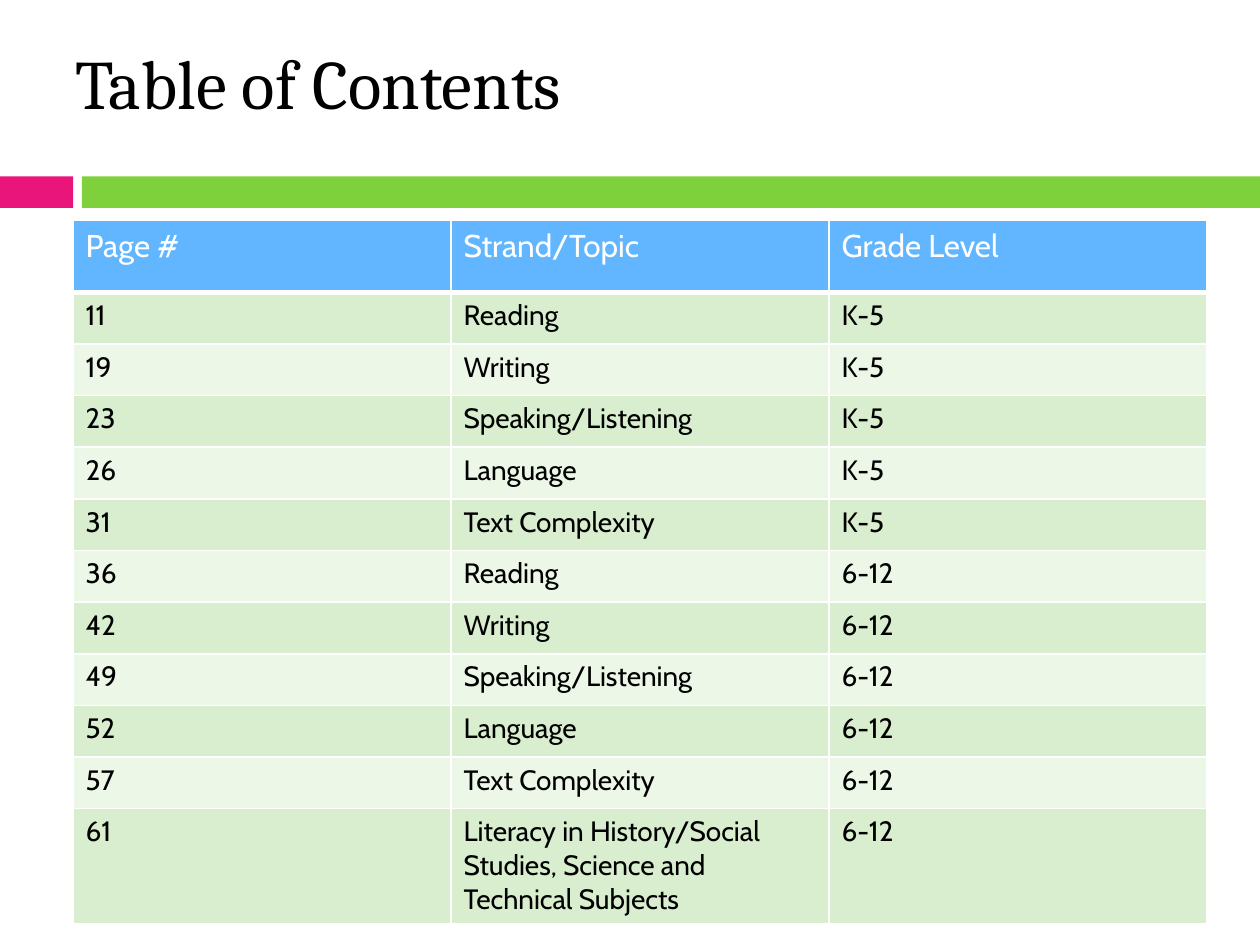
from lxml.etree import SubElement
from pptx import Presentation
from pptx.dml.color import RGBColor
from pptx.enum.shapes import MSO_SHAPE as SHAPE
from pptx.enum.text import MSO_ANCHOR as ANCHOR, PP_ALIGN as ALIGN
from pptx.oxml.ns import qn
from pptx.util import Inches, Pt

WHITE, BLACK = "FFFFFF", "000000"
PINK, GREEN, BLUE = "EA157A", "7FD13B", "61B6FF"
BANDS = ("D8EECE", "ECF7E8")

HEADER = ("Page #", "Strand/Topic", "Grade Level")
STRANDS = ("Reading", "Writing", "Speaking/Listening", "Language", "Text Complexity")
PAGES = {"K-5": (11, 19, 23, 26, 31), "6-12": (36, 42, 49, 52, 57)}
LAST = ("61", "Literacy in History/Social Studies, Science and Technical Subjects", "6-12")


def color(value):
    return RGBColor.from_string(value)


def paint(obj, value):
    obj.fill.solid()
    obj.fill.fore_color.rgb = color(value)


def write(tf, text, size=16, font="Cabin", ink=BLACK):
    p = tf.paragraphs[0]
    p.alignment = ALIGN.LEFT
    r = p.add_run()
    r.text = text
    r.font.size, r.font.name, r.font.bold = Pt(size), font, False
    r.font.color.rgb = color(ink)


def border(cell, bottom=1):
    """White lines on all four sides; they come before the fill."""
    tcPr = cell._tc.get_or_add_tcPr()
    for i, (side, width) in enumerate(zip("LRTB", (1, 1, 1, bottom))):
        ln = SubElement(tcPr, qn(f"a:ln{side}"), w=str(Pt(width)))
        SubElement(SubElement(ln, qn("a:solidFill")), qn("a:srgbClr"), val=WHITE)
        tcPr.insert(i, ln)


def add_title(s, box, text):
    title = s.shapes.title
    title.left, title.top, title.width, title.height = map(Inches, box)
    tf = title.text_frame
    tf.word_wrap, tf.vertical_anchor = True, ANCHOR.MIDDLE
    write(tf, text, size=39.6, font="Cambria")


def add_bars(s, box, split=0.58, gap=0.07):
    """A short pink bar, then a green one up to the right edge."""
    left, top, width, height = box
    start = split + gap
    for x, w, fill in ((left, split, PINK), (left + start, width - start, GREEN)):
        sp = s.shapes.add_shape(SHAPE.RECTANGLE, *map(Inches, (x, top, w, height)))
        sp.shadow.inherit = False
        paint(sp, fill)
        sp.line.fill.background()


def add_contents(s, box, rows, header_height=0.57, row_height=0.41):
    left, top, width, height = box
    table = s.shapes.add_table(len(rows), len(HEADER), *map(Inches, box)).table
    table.horz_banding = False
    for col in table.columns:
        col.width = Inches(width / len(HEADER))

    # The last row takes what the others leave
    middle = [row_height] * (len(rows) - 2)
    heights = [header_height, *middle, height - header_height - sum(middle)]
    for i, (values, row_h) in enumerate(zip(rows, heights)):
        table.rows[i].height = Inches(row_h)
        for j, value in enumerate(values):
            cell = table.cell(i, j)
            paint(cell, BANDS[(i - 1) % 2] if i else BLUE)
            border(cell, bottom=1 if i else 3)
            write(cell.text_frame, value, size=16 if i else 18,
                  ink=BLACK if i else WHITE)


def main():
    prs = Presentation()
    prs.slide_width, prs.slide_height = Inches(10), Inches(7.5)
    s = prs.slides.add_slide(prs.slide_layouts[5])
    paint(s.background, WHITE)

    body = [(str(page), strand, grade)
            for grade, pages in PAGES.items()
            for page, strand in zip(pages, STRANDS)]
    add_bars(s, (0, 1.4, 10, 0.25))
    add_contents(s, (0.58, 1.75, 9, 5.58), [HEADER, *body, LAST])
    add_title(s, (0.5, 0.3, 9, 0.7), "Table of Contents")
    prs.save("out.pptx")


if __name__ == "__main__":
    main()
